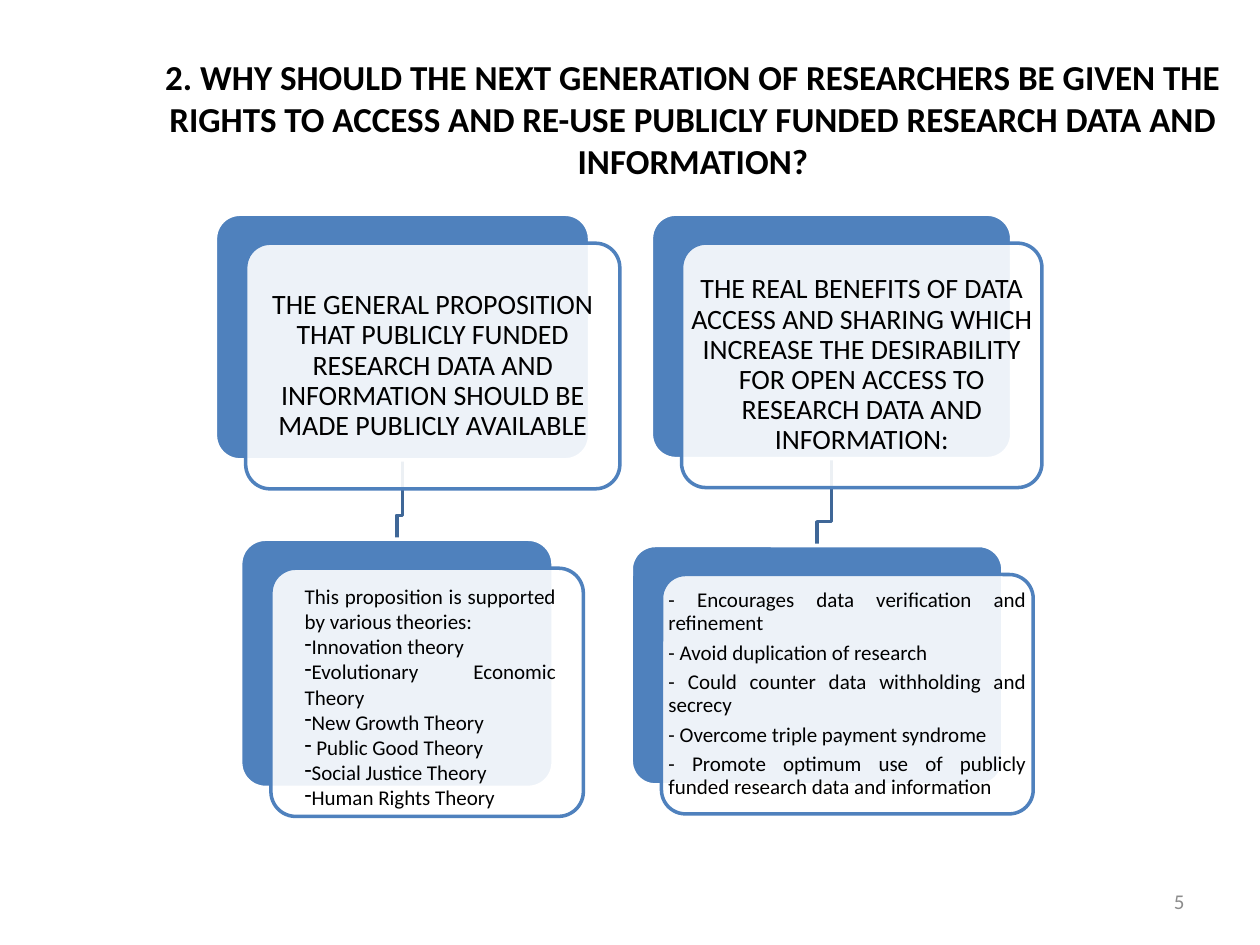
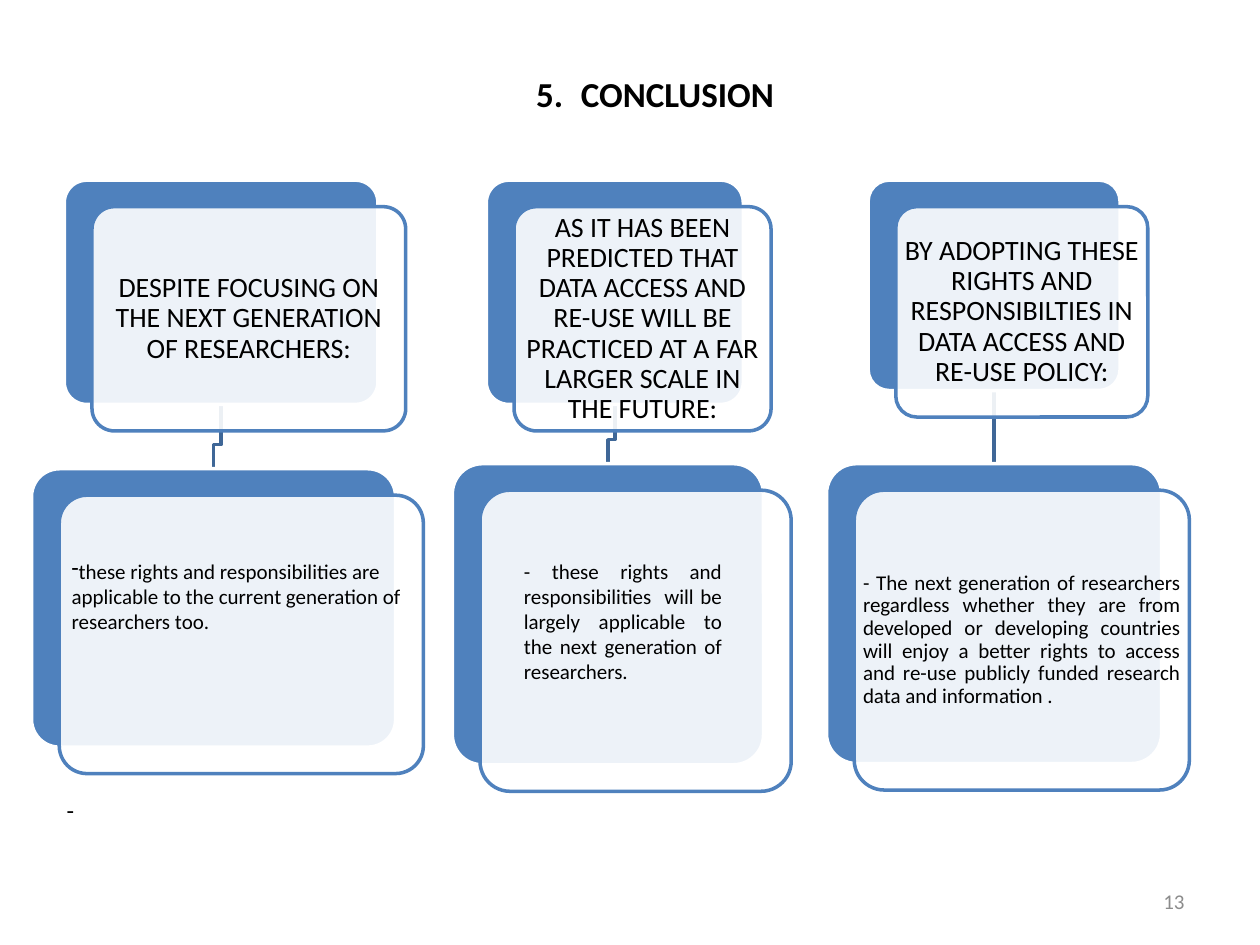
from dataclasses import dataclass

from lxml.etree import SubElement
from pptx import Presentation
from pptx.dml.color import RGBColor
from pptx.enum.shapes import MSO_CONNECTOR, MSO_SHAPE
from pptx.enum.text import MSO_ANCHOR, MSO_AUTO_SIZE, PP_ALIGN
from pptx.oxml.ns import qn
from pptx.util import Pt

PX = 9144  # one px is 1/100 inch
LEFT, CENTER, RIGHT, JUSTIFY = (
    PP_ALIGN.LEFT, PP_ALIGN.CENTER, PP_ALIGN.RIGHT, PP_ALIGN.JUSTIFY)


@dataclass(frozen=True)
class Theme:
    font: str = "Calibri"
    ink: str = "000000"
    muted: str = "8C8C8C"
    panel: str = "4F81BD"
    link: str = "3F6797"
    paper: str = "FFFFFF"
    title: int = 20
    title_gap: int = 24
    head: int = 16
    dash: int = 14
    body: int = 12
    line: int = 2
    para_gap: int = 4
    corner: float = 0.1
    plate_opacity: int = 90


T = Theme()


def emu(*px):
    return [round(v * PX) for v in px]


def rgb(code):
    return RGBColor.from_string(code)


def add_run(p, text, size, color=T.ink, bold=False):
    r = p.add_run()
    r.text = text
    r.font.name, r.font.size, r.font.bold = T.font, Pt(size), bold
    r.font.color.rgb = rgb(color)


def add_bullet(p, tag, **attrs):
    """Put a marker in front of the paragraph, with no indent."""
    pPr = p._p.get_or_add_pPr()
    pPr.set("marL", "0")
    pPr.set("indent", "0")
    SubElement(pPr, qn(f"a:{tag}"), attrs)


def write(tf, lines, size, align, color=T.ink, spacing=None, gap=0):
    """Write one paragraph per line; a line starting with • gets a dash marker."""
    for i, line in enumerate(lines):
        p = tf.paragraphs[0] if i == 0 else tf.add_paragraph()
        p.alignment, p.line_spacing, p.space_after = align, spacing, Pt(gap)
        if line.startswith("•"):
            add_bullet(p, "buChar", char="-")
        add_run(p, line.lstrip("•"), size, color)


def add_text(s, box, lines, size=T.body, align=JUSTIFY, color=T.ink,
             anchor=MSO_ANCHOR.TOP):
    tf = s.shapes.add_textbox(*emu(*box)).text_frame
    tf.word_wrap, tf.vertical_anchor = True, anchor
    write(tf, lines, size, align, color)


def add_title(s, box, runs, start=None):
    sp = s.shapes.title
    sp.left, sp.top, sp.width, sp.height = emu(*box)
    tf = sp.text_frame
    tf.auto_size, tf.vertical_anchor = MSO_AUTO_SIZE.NONE, MSO_ANCHOR.TOP
    p = tf.paragraphs[0]
    p.alignment = CENTER
    if start:
        add_bullet(p, "buAutoNum", type="arabicPeriod", startAt=str(start))
    for text, size in runs:
        add_run(p, text, size, bold=True)


def add_slide(prs, number, title_box, title_runs, start=None):
    s = prs.slides.add_slide(prs.slide_layouts[5])
    add_title(s, title_box, title_runs, start)
    add_text(s, (717, 695, 233, 40), [number], align=RIGHT, color=T.muted,
             anchor=MSO_ANCHOR.MIDDLE)
    return s


def add_plate(s, box, fill, line):
    sp = s.shapes.add_shape(MSO_SHAPE.ROUNDED_RECTANGLE, *emu(*box))
    sp.adjustments[0] = T.corner
    sp.shadow.inherit = False
    sp.fill.solid()
    sp.fill.fore_color.rgb = rgb(fill)
    sp.line.color.rgb, sp.line.width = rgb(line), Pt(T.line)
    return sp


def add_panel(s, box, offset, lines=(), size=T.body, align=JUSTIFY, inset=0):
    """Blue plate with a translucent white plate shifted over it."""
    x, y, w, h = box
    add_plate(s, box, T.panel, T.paper)
    sp = add_plate(s, (x + offset[0], y + offset[1], w, h), T.paper, T.panel)
    color = sp.fill._xPr.find(qn("a:solidFill"))[0]
    SubElement(color, qn("a:alpha"), val=str(T.plate_opacity * 1000))
    tf = sp.text_frame
    tf.word_wrap, tf.vertical_anchor = True, MSO_ANCHOR.MIDDLE
    tf.margin_left = tf.margin_right = tf.margin_top = tf.margin_bottom = inset * PX
    write(tf, lines, size, align, spacing=0.9, gap=T.para_gap)


def add_link(s, upper, lower, bend=19):
    """Join the bottom centre of one box to the top centre of the next."""
    x1, y1 = upper[0] + upper[2] / 2, upper[1] + upper[3]
    x2, y2 = lower[0] + lower[2] / 2, lower[1]
    if x1 == x2:
        sp = s.shapes.add_connector(MSO_CONNECTOR.STRAIGHT, *emu(x1, y1, x2, y2))
        SubElement(sp._element.spPr, qn("a:effectLst"))
    else:
        fb = s.shapes.build_freeform(*emu(x1, y1))
        corners = [(x1, y2 - bend), (x2, y2 - bend), (x2, y2)]
        fb.add_line_segments([emu(*c) for c in corners], close=False)
        sp = fb.convert_to_shape()
        sp.fill.background()
        sp.shadow.inherit = False
    sp.line.color.rgb, sp.line.width = rgb(T.link), Pt(T.line)


def add_columns(s, columns, offset):
    """Each column is a heading box above a detail box, joined by a link."""
    for upper, _, lower, _ in columns:
        add_link(s, upper, lower)
    for upper, heading, lower, details in columns:
        add_panel(s, upper, offset, [heading], T.head, CENTER, inset=1)
        add_panel(s, lower, offset, details)


def reasons_slide(prs):
    s = add_slide(prs, "5", (100, 39, 900, 125), [
        (" WHY SHOULD THE NEXT GENERATION OF RESEARCHERS BE GIVEN THE RIGHTS TO "
         "ACCESS AND RE-USE PUBLICLY FUNDED RESEARCH DATA AND INFORMATION?",
         T.title)], start=2)
    add_columns(s, [
        ((171, 170, 297, 195),
         "THE GENERAL PROPOSITION THAT PUBLICLY FUNDED RESEARCH DATA AND "
         "INFORMATION SHOULD BE MADE PUBLICLY AVAILABLE",
         (191, 428, 248, 197), []),
        ((517, 170, 286, 194),
         "THE REAL BENEFITS OF DATA ACCESS AND SHARING WHICH INCREASE THE "
         "DESIRABILITY FOR OPEN ACCESS TO RESEARCH DATA AND INFORMATION:",
         (501, 433, 295, 190), [
             "- Encourages data verification and refinement",
             "- Avoid duplication of research",
             "- Could counter data withholding and secrecy",
             "- Overcome triple payment syndrome",
             "- Promote optimum use of publicly funded research data and "
             "information"]),
    ], offset=(24, 23))
    add_text(s, (232, 458, 219, 212), [
        "This proposition is supported by various theories:",
        "•Innovation theory",
        "•Evolutionary Economic Theory",
        "•New Growth Theory",
        "• Public Good Theory",
        "•Social Justice Theory",
        "•Human Rights Theory"])


def conclusion_slide(prs):
    s = add_slide(prs, "13", (70, 47, 900, 125), [
        ("5. ", T.title), (" ", T.title_gap), ("CONCLUSION", T.title)])
    add_columns(s, [
        ((51, 143, 249, 178),
         "DESPITE FOCUSING ON THE NEXT GENERATION OF RESEARCHERS:",
         (25, 372, 289, 221), []),
        ((386, 143, 204, 178),
         "AS IT HAS BEEN PREDICTED THAT DATA ACCESS AND RE-USE WILL BE PRACTICED "
         "AT A FAR LARGER SCALE IN THE FUTURE:",
         (359, 368, 247, 239), []),
        ((689, 143, 200, 167),
         "BY ADOPTING THESE RIGHTS AND RESPONSIBILTIES IN DATA ACCESS AND RE-USE "
         "POLICY:",
         (656, 368, 266, 238), [
             "- The next generation of researchers regardless whether they are "
             "from developed or developing countries will enjoy a better rights "
             "to access and re-use publicly funded research data and "
             "information ."]),
    ], offset=(22, 21))
    add_text(s, (47, 438, 288, 71), [
        "•these rights and responsibilities are applicable to the current "
        "generation of researchers too."], align=LEFT)
    add_text(s, (406, 438, 177, 111), [
        "- these rights and responsibilities  will be largely applicable to the "
        "next generation of researchers."])
    add_text(s, (43, 627, 40, 32), ["-"], T.dash, LEFT, anchor=MSO_ANCHOR.MIDDLE)


def main():
    prs = Presentation()
    prs.slide_width, prs.slide_height = emu(1000, 750)
    reasons_slide(prs)
    conclusion_slide(prs)
    prs.save("out.pptx")


if __name__ == "__main__":
    main()
